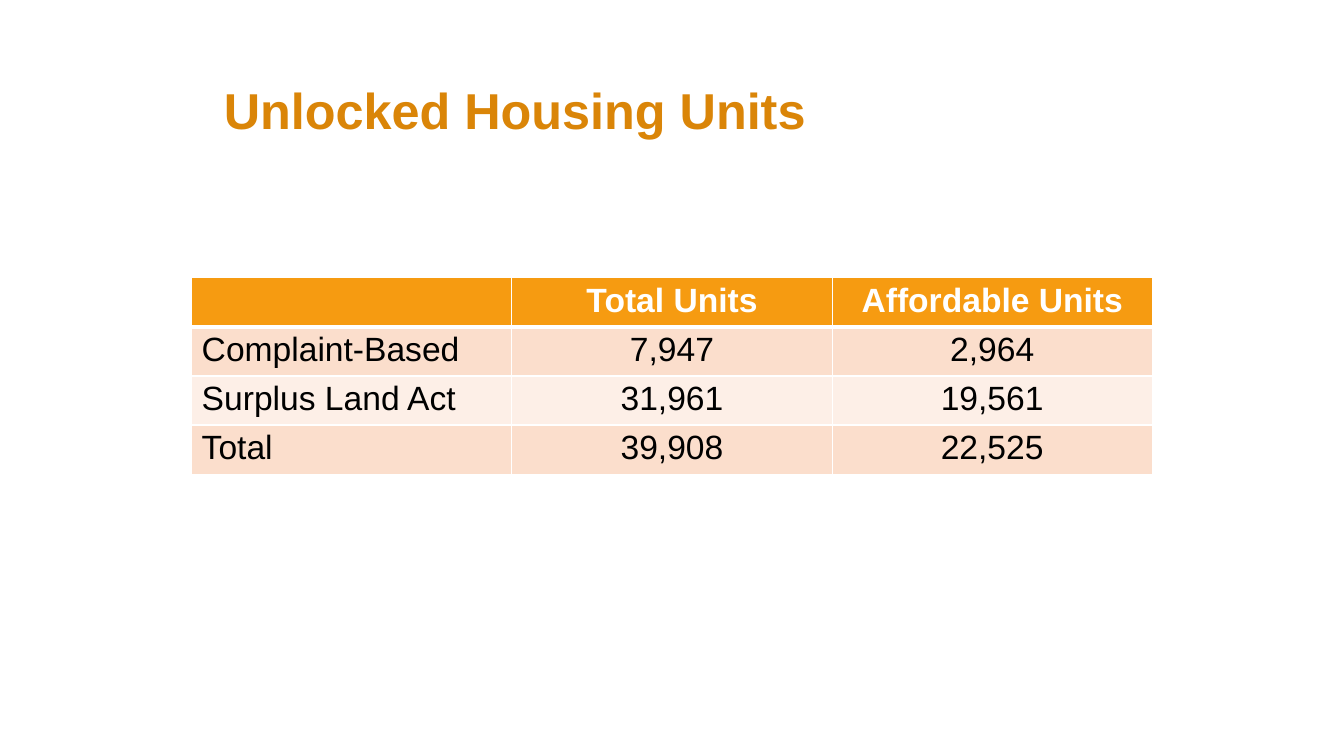
"""Build the slide on unlocked housing units."""
from lxml import etree
from pptx import Presentation
from pptx import util as u
from pptx.dml.color import RGBColor
from pptx.enum import text
from pptx.oxml import ns

WHITE = RGBColor(0xFF, 0xFF, 0xFF)
BLACK = RGBColor(0x00, 0x00, 0x00)
TITLE = RGBColor(0xDA, 0x85, 0x08)
HEADER = RGBColor(0xF6, 0x9B, 0x11)
BANDS = RGBColor(0xFD, 0xEF, 0xE7), RGBColor(0xFB, 0xDE, 0xCC)

ROWS = [
    ("", "Total Units", "Affordable Units"),
    ("Complaint-Based", "7,947", "2,964"),
    ("Surplus Land Act", "31,961", "19,561"),
    ("Total", "39,908", "22,525"),
]


def write(tf, content, font="Arial", size=24, color=BLACK, bold=False,
          align=text.PP_ALIGN.LEFT):
    p = tf.paragraphs[0]
    p.alignment = align
    p.font.size = u.Pt(size)
    if content:
        r = p.add_run()
        r.text = content
        r.font.name = font
        r.font.size = u.Pt(size)
        r.font.bold = bold
        r.font.color.rgb = color


def add_border(cell, side, width, color=WHITE):
    tc_pr = cell._tc.get_or_add_tcPr()
    ln = etree.SubElement(tc_pr, ns.qn(f"a:ln{side}"), w=str(u.Pt(width)))
    fill = etree.SubElement(ln, ns.qn("a:solidFill"))
    etree.SubElement(fill, ns.qn("a:srgbClr"), val=str(color))


class Deck:
    def __init__(self, font="Arial"):
        self.font = font
        self.prs = Presentation()
        self.prs.slide_width = u.Cm(33.87)
        self.prs.slide_height = u.Cm(19.05)
        self.s = self.prs.slides.add_slide(self.prs.slide_layouts[6])

    def title(self, content, left, top, width, height):
        sp = self.s.shapes.add_textbox(*map(u.Cm, (left, top, width, height)))
        tf = sp.text_frame
        tf.word_wrap = True
        tf.vertical_anchor = text.MSO_ANCHOR.MIDDLE
        tf.margin_left = tf.margin_right = tf.margin_top = tf.margin_bottom = 0
        write(tf, content, font=self.font, size=36, color=TITLE, bold=True)

    def table(self, rows, left, top, col_width, row_height):
        n_rows, n_cols = len(rows), len(rows[0])
        size = left, top, col_width * n_cols, row_height * n_rows
        table = self.s.shapes.add_table(n_rows, n_cols, *map(u.Cm, size)).table
        for i, row in enumerate(rows):
            table.rows[i].height = u.Cm(row_height)
            for j, content in enumerate(row):
                self.cell(table.cell(i, j), content, i, j)

    def cell(self, cell, content, i, j):
        header = i == 0
        widths = {"L": 1, "R": 1, "T": 3 if i == 1 else 1, "B": 3 if header else 1}
        for side, width in widths.items():
            add_border(cell, side, width)
        cell.fill.solid()
        cell.fill.fore_color.rgb = HEADER if header else BANDS[i % 2]
        cell.margin_top = cell.margin_bottom = u.Cm(0.11)
        write(cell.text_frame, content, font=self.font, bold=header,
              color=WHITE if header else BLACK,
              align=text.PP_ALIGN.CENTER if j else text.PP_ALIGN.LEFT)


def main():
    deck = Deck()
    deck.title("Unlocked Housing Units", 5.64, 1.27, 25.12, 2.97)
    deck.table(ROWS, left=4.83, top=7, col_width=8.07, row_height=1.19)
    deck.prs.save("out.pptx")


if __name__ == "__main__":
    main()
